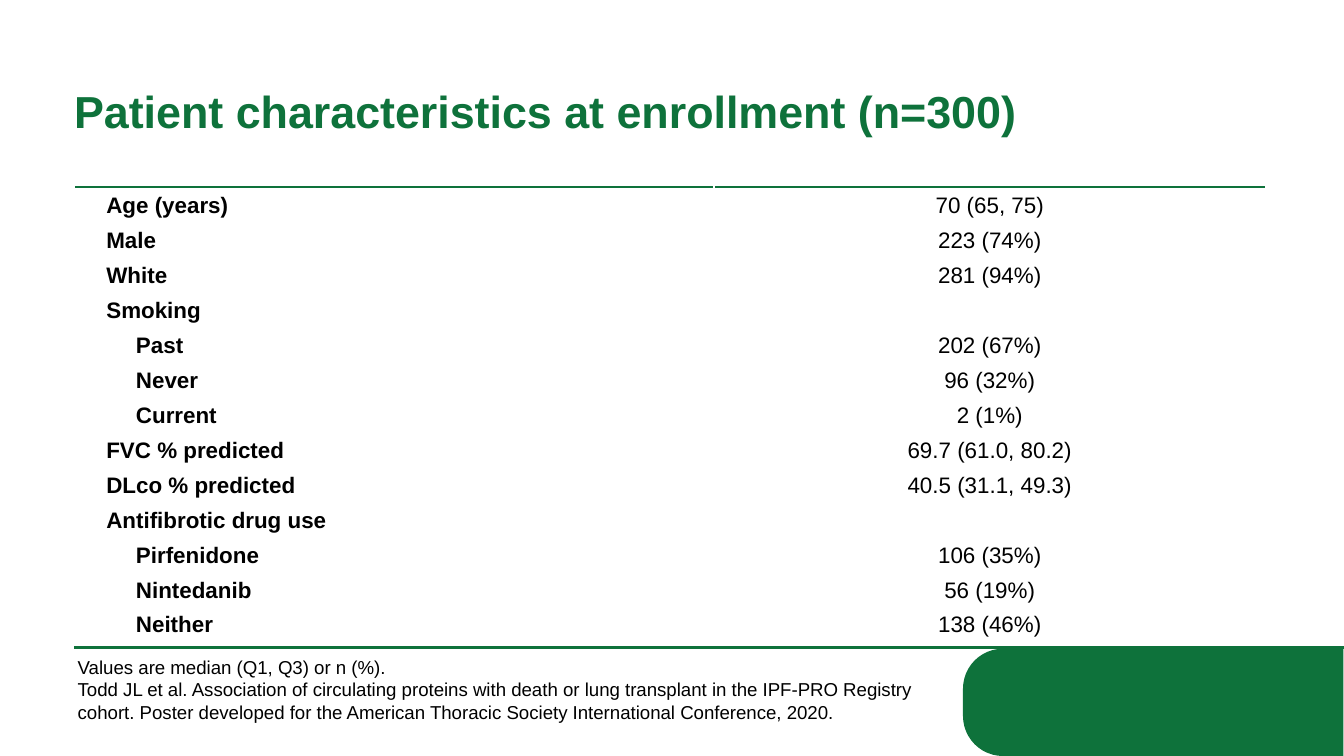
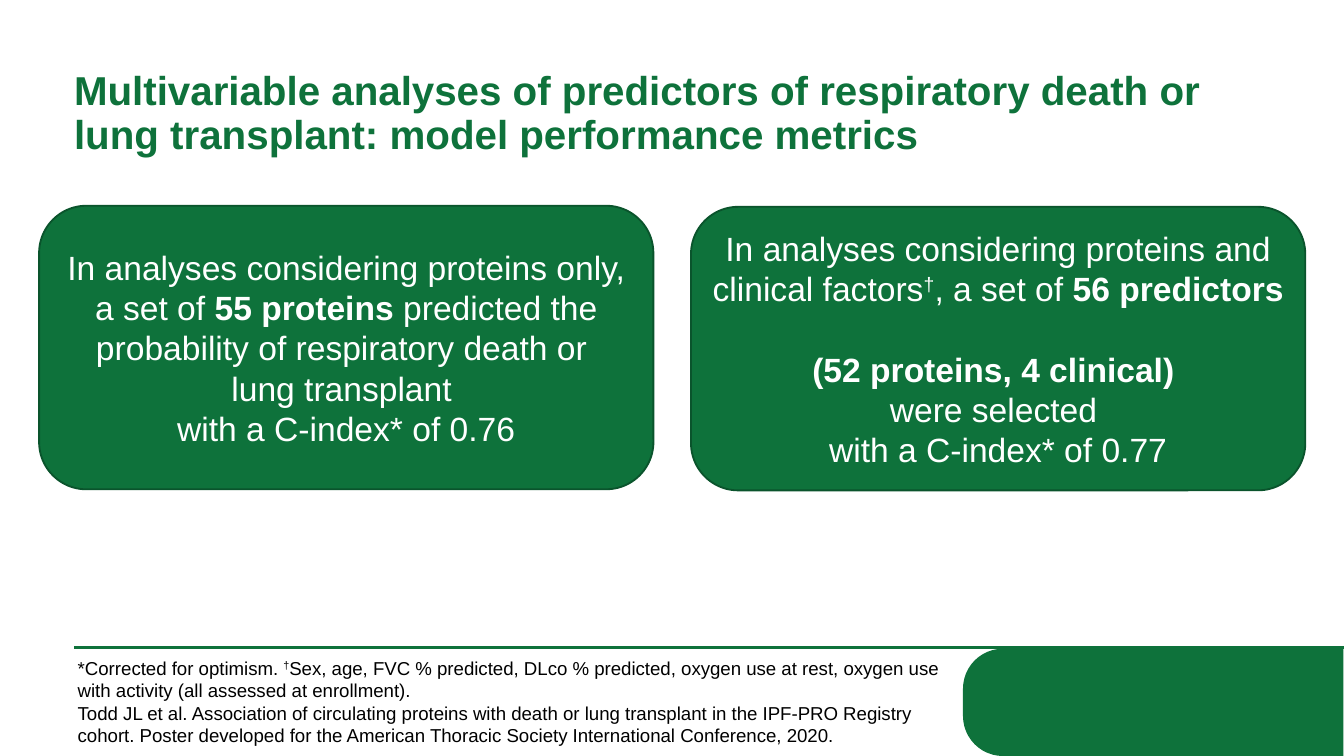
import pptx
import pptx.dml.color
import pptx.enum.shapes
import pptx.enum.text
import pptx.util
from lxml import etree
from pptx.oxml.ns import qn

Cm = pptx.util.Cm
Pt = pptx.util.Pt
Shape = pptx.enum.shapes.MSO_SHAPE
Align = pptx.enum.text.PP_ALIGN
MIDDLE = pptx.enum.text.MSO_ANCHOR.MIDDLE

COLORS = {"green": "0E723B", "dark green": "0A542C", "black": "000000", "white": "FFFFFF"}
FONT = "Arial"
LEFT = 1.4
CITATION = (
    "Todd JL et al. Association of circulating proteins with death or lung transplant in the "
    "IPF-PRO Registry cohort. Poster developed for the American Thoracic Society International "
    "Conference, 2020."
)


def color(name):
    return pptx.dml.color.RGBColor.from_string(COLORS[name])


def write_text(frame, paragraphs, size=12, ink="black", bold=False, align=Align.LEFT,
               spacing=None, indent=0):
    """Each paragraph is a list of (text, style), style being "", "bold" or "super"."""
    frame.word_wrap = True
    for index, pieces in enumerate(paragraphs):
        paragraph = frame.add_paragraph() if index else frame.paragraphs[0]
        paragraph.alignment = align
        if spacing:
            paragraph.line_spacing = spacing
        if indent:
            paragraph._p.get_or_add_pPr().set("indent", str(Cm(indent)))
        for text, style in pieces:
            for number, line in enumerate(text.split("\n")):
                if number:
                    paragraph.add_line_break()
                run = paragraph.add_run()
                run.text = line
                run.font.name = FONT
                run.font.size = Pt(size)
                run.font.bold = bold or style == "bold"
                run.font.color.rgb = color(ink)
                if style == "super":
                    run._r.get_or_add_rPr().set("baseline", "30000")
        if not pieces:
            end = etree.SubElement(paragraph._p, qn("a:endParaRPr"))
            end.set("sz", str(size * 100))


presentation = pptx.Presentation()
presentation.slide_width = Cm(25.4)
presentation.slide_height = Cm(14.29)

# Band, rule, title and footnote on both slides
pages = [
    {
        "title": "Patient characteristics at enrollment (n=300)",
        "title size": 24,
        "note": [("Values are median (Q1, Q3) or n (%).", "")],
        "note place": (1.22, 12.27, 17.02, 1.55),
    },
    {
        "title": "Multivariable analyses of predictors of respiratory death or lung transplant: "
                 "model performance metrics",
        "title size": 21.6,
        "note": [
            ("*Corrected for optimism. ", ""),
            ("†", "super"),
            ("Sex, age, FVC % predicted, DLco % predicted, oxygen use at rest, oxygen use with "
             "activity (all assessed at enrollment).", ""),
        ],
        "note place": (1.22, 12.29, 17.4, 1.96),
    },
]
slides = []
for page in pages:
    slide = presentation.slides.add_slide(presentation.slide_layouts[6])
    slides.append(slide)

    band = slide.shapes.add_shape(
        Shape.ROUND_2_SAME_RECTANGLE, Cm(20.78), Cm(9.68), Cm(2.03), Cm(7.19))
    band.rotation = 270
    band.adjustments[0] = 0.373
    band.adjustments[1] = 0
    band.shadow.inherit = False
    band.fill.solid()
    band.fill.fore_color.rgb = color("green")
    band.line.fill.background()

    rule = slide.shapes.add_connector(
        pptx.enum.shapes.MSO_CONNECTOR.STRAIGHT, Cm(LEFT), Cm(12.24), Cm(25.4), Cm(12.24))
    rule.line.color.rgb = color("green")
    rule.line.width = Pt(1.25)
    etree.SubElement(rule._element.spPr, qn("a:effectLst"))

    title = slide.shapes.add_textbox(Cm(LEFT), Cm(1.22), Cm(22.5), Cm(1.88))
    title.text_frame.margin_left = 0
    title.text_frame.vertical_anchor = MIDDLE
    write_text(title.text_frame, [[(page["title"], "")]], size=page["title size"],
               ink="green", bold=True, spacing=0.9)

    note = slide.shapes.add_textbox(*[Cm(length) for length in page["note place"]])
    write_text(note.text_frame, [page["note"], [(CITATION, "")]], size=10)
    note.text_frame.auto_size = pptx.enum.text.MSO_AUTO_SIZE.SHAPE_TO_FIT_TEXT

# Slide 1: characteristics table (label, value, indent)
SUB = 0.56
characteristics = [
    ("Age (years)", "70 (65, 75)", 0),
    ("Male", "223 (74%)", 0),
    ("White", "281 (94%)", 0),
    ("Smoking", "", 0),
    ("Past", "202 (67%)", SUB),
    ("Never", "96 (32%)", SUB),
    ("Current", "2 (1%)", SUB),
    ("FVC % predicted", "69.7 (61.0, 80.2)", 0),
    ("DLco % predicted", "40.5 (31.1, 49.3)", 0),
    ("Antifibrotic drug use", "", 0),
    ("Pirfenidone", "106 (35%)", SUB),
    ("Nintedanib", "56 (19%)", SUB),
    ("Neither", "138 (46%)", SUB),
]
table = slides[0].shapes.add_table(
    len(characteristics), 2, Cm(LEFT), Cm(3.53), Cm(22.52), Cm(8.58)).table
table.first_row = False
table.horz_banding = False
table.columns[0].width = Cm(12.09)
table.columns[1].width = Cm(10.43)
for row, (label, value, indent) in enumerate(characteristics):
    table.rows[row].height = Cm(0.66)
    for column, text in enumerate((label, value)):
        is_label = column == 0
        cell = table.cell(row, column)
        cell.margin_left = Cm(0.61 if is_label else 0.18)
        cell.margin_right = Cm(0.18)
        cell.margin_top = cell.margin_bottom = 0
        cell.vertical_anchor = MIDDLE
        write_text(cell.text_frame, [[(text, "")] if text else []], bold=is_label, spacing=1.15,
                   align=Align.LEFT if is_label else Align.CENTER,
                   indent=indent if is_label else 0)
        if row == 0:
            border = etree.SubElement(cell._tc.get_or_add_tcPr(), qn("a:lnT"), w=str(Pt(1)))
            border_fill = etree.SubElement(border, qn("a:solidFill"))
            etree.SubElement(border_fill, qn("a:srgbClr"), val=COLORS["green"])
        cell.fill.solid()
        cell.fill.fore_color.rgb = color("white")

# Slide 2: one card for each model
cards = [
    (0.74, 3.89, 0.2, [
        [("In analyses considering proteins only, ", "")],
        [("a set of ", ""), ("55 proteins ", "bold"),
         ("predicted the probability of respiratory death or \nlung transplant \n"
          "with a C-index* of 0.76", "")],
    ]),
    (13.06, 3.91, 0.1, [
        [("In analyses considering proteins and clinical factors", ""), ("†", "super"),
         (", a set of ", ""), ("56 predictors \n(52 proteins, 4 clinical) ", "bold")],
        [("were selected \nwith a C-index* of 0.77", "")],
    ]),
]
for left, top, margin, paragraphs in cards:
    card = slides[1].shapes.add_shape(
        Shape.ROUNDED_RECTANGLE, Cm(left), Cm(top), Cm(11.61), Cm(5.36))
    card.shadow.inherit = False
    card.fill.solid()
    card.fill.fore_color.rgb = color("green")
    card.line.color.rgb = color("dark green")
    card.line.width = Pt(1)
    card.text_frame.margin_left = card.text_frame.margin_right = Cm(margin)
    card.text_frame.vertical_anchor = MIDDLE
    write_text(card.text_frame, paragraphs, size=18, ink="white", align=Align.CENTER)

presentation.save("out.pptx")
